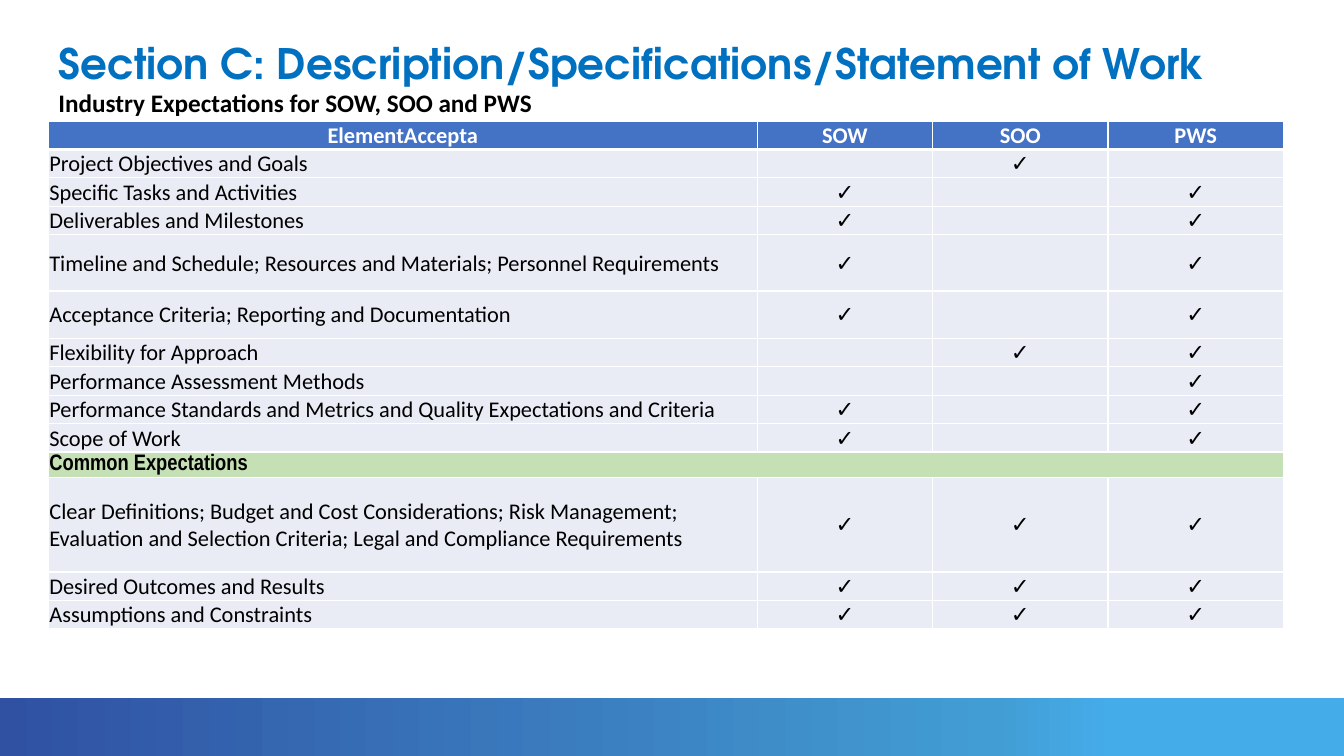
from lxml.etree import SubElement
from pptx import Presentation
from pptx.dml.color import RGBColor
from pptx.enum.shapes import MSO_SHAPE
from pptx.enum.text import MSO_ANCHOR, PP_ALIGN
from pptx.oxml.ns import qn
from pptx.util import Inches, Pt

COLORS = {
    "title": "0070C0", "text": "000000", "white": "FFFFFF",
    "header": "4472C4", "row": "E9EBF5", "common": "C5E0B4",
}
BAND_STOPS = [(0, "3051A2"), (74, "429DD4"), (83, "45ACEA"), (100, "45ACEA")]
HEADINGS = ["ElementAccepta", "SOW", "SOO", "PWS"]
COMMON = "Common Expectations"
# Row height, element, documents expected to contain it
ROWS = [
    (0.28, "Project Objectives and Goals", "SOO"),
    (0.28, "Specific Tasks and Activities", "SOW PWS"),
    (0.28, "Deliverables and Milestones", "SOW PWS"),
    (0.56, "Timeline and Schedule; Resources and Materials; Personnel Requirements", "SOW PWS"),
    (0.47, "Acceptance Criteria; Reporting and Documentation", "SOW PWS"),
    (0.28, "Flexibility for Approach", "SOO PWS"),
    (0.28, "Performance Assessment Methods", "PWS"),
    (0.28, "Performance Standards and Metrics and Quality Expectations and Criteria", "SOW PWS"),
    (0.28, "Scope of Work", "SOW PWS"),
    (0.25, COMMON, ""),
    (0.94, "Clear Definitions; Budget and Cost Considerations; Risk Management; "
           "Evaluation and Selection Criteria; Legal and Compliance Requirements", "SOW SOO PWS"),
    (0.28, "Desired Outcomes and Results", "SOW SOO PWS"),
    (0.28, "Assumptions and Constraints", "SOW SOO PWS"),
]


def rgb(name):
    return RGBColor.from_string(COLORS[name])


def style_font(font, name, size, color, bold):
    font.name, font.size, font.bold = name, Pt(size), bold
    font.color.rgb = rgb(color)


def add_band(s, left, top, width, height):
    band = s.shapes.add_shape(MSO_SHAPE.RECTANGLE, Inches(left), Inches(top),
                              Inches(width), Inches(height))
    band.shadow.inherit = False
    band.line.fill.background()
    band.fill.gradient()
    band.fill.gradient_angle = 0
    stops = band.fill._fill._gradFill.find(qn("a:gsLst"))
    for stop in list(stops):
        stops.remove(stop)
    for percent, color in BAND_STOPS:
        stop = SubElement(stops, qn("a:gs"), pos=str(percent * 1000))
        SubElement(stop, qn("a:srgbClr"), val=color)


def add_title(s, left, top, width, height):
    title = s.shapes.title
    title.left, title.top = Inches(left), Inches(top)
    title.width, title.height = Inches(width), Inches(height)
    tf = title.text_frame
    tf.text = ("Section C: Description/Specifications/Statement of Work\n"
               "Industry Expectations for SOW, SOO and PWS")
    tf.vertical_anchor = MSO_ANCHOR.TOP
    styles = [("TeX Gyre Adventor", 30, "title"), ("Calibri", 18, "text")]
    for p, style in zip(tf.paragraphs, styles):
        p.alignment = PP_ALIGN.LEFT
        style_font(p.runs[0].font, *style, bold=True)


def set_borders(cell, top, bottom):
    """Draw white cell borders; top and bottom are widths in points."""
    tcPr = cell._tc.get_or_add_tcPr()
    for side, width in (("L", 1), ("R", 1), ("T", top), ("B", bottom)):
        ln = SubElement(tcPr, qn(f"a:ln{side}"), w=str(Pt(width)))
        fill = SubElement(ln, qn("a:solidFill"))
        SubElement(fill, qn("a:srgbClr"), val=COLORS["white"])


def fill_cell(cell, text, row, col):
    header, common = row == 0, text == COMMON
    set_borders(cell, 3 if row == 1 else 1, 3 if header else 1)
    cell.fill.solid()
    cell.fill.fore_color.rgb = rgb("header" if header else "common" if common else "row")
    cell.margin_left = cell.margin_right = cell.margin_top = Inches(0.01)
    cell.margin_bottom = 0
    cell.vertical_anchor = MSO_ANCHOR.MIDDLE
    p = cell.text_frame.paragraphs[0]
    if not text:
        SubElement(p._p, qn("a:endParaRPr"), sz="1600")
        return
    p.text = text
    p.alignment = PP_ALIGN.CENTER if header or col else PP_ALIGN.LEFT
    style_font(p.runs[0].font, "Arial Narrow" if common else "Calibri", 16,
               "white" if header else "text", header or common)


def add_expectations(s, left, top, width, height):
    table = s.shapes.add_table(len(ROWS) + 1, len(HEADINGS), Inches(left), Inches(top),
                               Inches(width), Inches(height)).table
    mark_width = 1.74
    for col in range(1, 4):
        table.columns[col].width = Inches(mark_width)
    table.columns[0].width = Inches(width - 3 * mark_width)
    lines = [(0.28, HEADINGS)]
    for row_height, element, documents in ROWS:
        marks = ["✓" if name in documents.split() else "" for name in HEADINGS[1:]]
        lines.append((row_height, [element] + marks))
    for row, (row_height, texts) in enumerate(lines):
        table.rows[row].height = Inches(row_height)
        for col, text in enumerate(texts):
            fill_cell(table.cell(row, col), text, row, col)
        if texts[0] == COMMON:
            table.cell(row, 0).merge(table.cell(row, 3))


def main():
    prs = Presentation()
    prs.slide_width, prs.slide_height = Inches(13.33), Inches(7.5)
    s = prs.slides.add_slide(prs.slide_layouts[5])
    add_band(s, 0, 6.92, 13.33, 0.58)
    add_title(s, 0.48, 0.32, 11.76, 0.91)
    add_expectations(s, 0.48, 1.2, 12.25, 5.04)
    prs.save("out.pptx")


if __name__ == "__main__":
    main()
